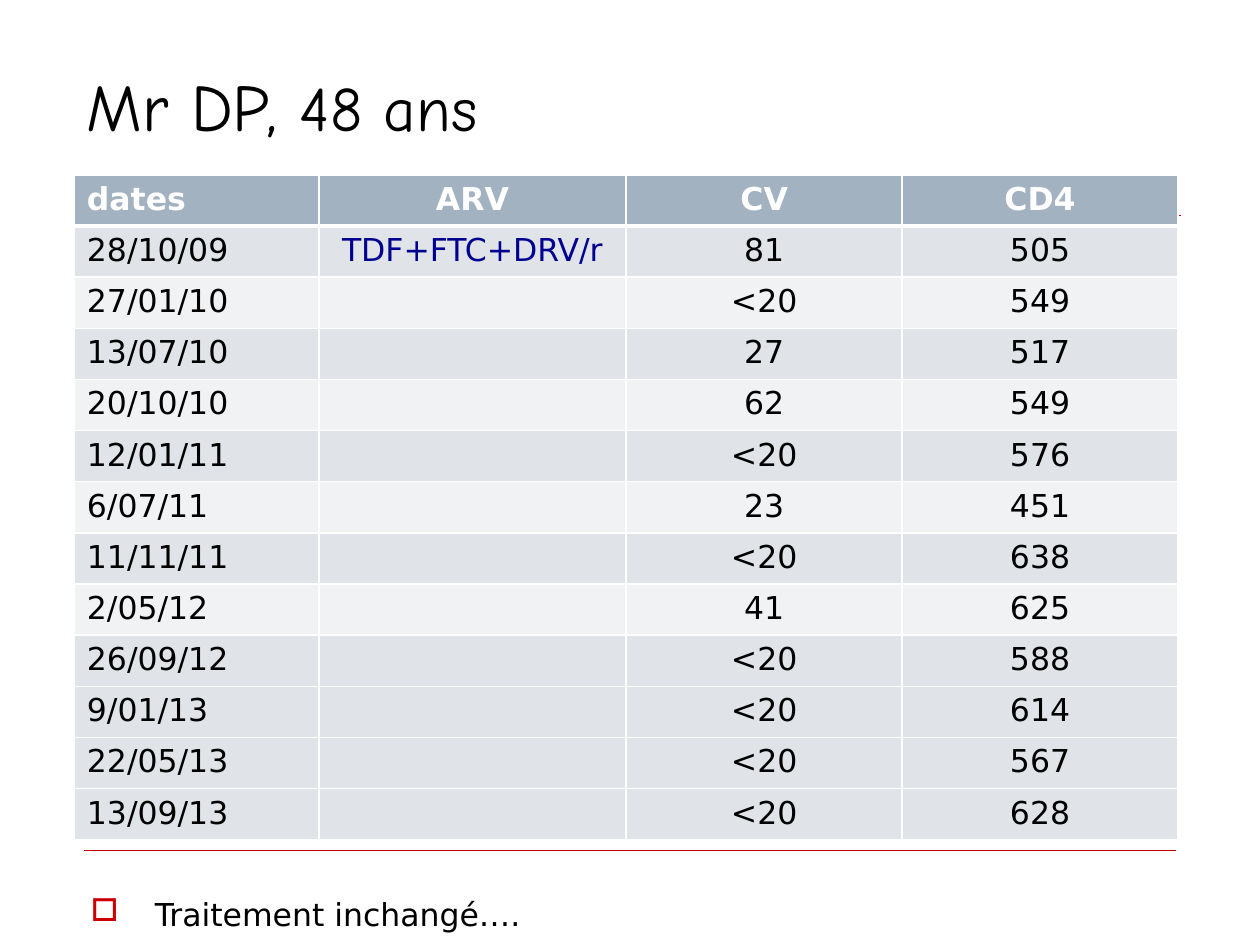
from lxml.etree import SubElement
from pptx import Presentation
from pptx.dml.color import RGBColor
from pptx.enum.shapes import MSO_CONNECTOR
from pptx.enum.text import MSO_ANCHOR as Anchor, PP_ALIGN as Align
from pptx.oxml import parse_xml
from pptx.oxml.ns import nsdecls, qn
from pptx.util import Inches, Pt

WHITE = RGBColor(0xFF, 0xFF, 0xFF)
BLACK = RGBColor(0x00, 0x00, 0x00)
RED = RGBColor(0xCC, 0x00, 0x00)
NAVY = RGBColor(0x00, 0x00, 0x90)
HEADER = RGBColor(0xA3, 0xB2, 0xC1)
DARK_BAND = RGBColor(0xE0, 0xE4, 0xE9)
LIGHT_BAND = RGBColor(0xF0, 0xF2, 0xF4)

TITLE_FONT = "Comic Neue"
BODY_FONT = "DejaVu Sans"

TREATMENT = "TDF+FTC+DRV/r"
COLUMN_SHARES = (0.194, 0.244, 0.219, 0.219)
LIGHT_ROWS = (2, 4, 6, 8)
RESULTS = [
    ("dates", "ARV", "CV", "CD4"),
    ("28/10/09", TREATMENT, "81", "505"),
    ("27/01/10", "", "<20", "549"),
    ("13/07/10", "", "27", "517"),
    ("20/10/10", "", "62", "549"),
    ("12/01/11", "", "<20", "576"),
    ("6/07/11", "", "23", "451"),
    ("11/11/11", "", "<20", "638"),
    ("2/05/12", "", "41", "625"),
    ("26/09/12", "", "<20", "588"),
    ("9/01/13", "", "<20", "614"),
    ("22/05/13", "", "<20", "567"),
    ("13/09/13", "", "<20", "628"),
]


class SlideBuilder:
    """Draws styled elements on one slide, placed by shares of its width and height."""

    def __init__(self, presentation):
        self.width = presentation.slide_width
        self.height = presentation.slide_height
        self.slide = presentation.slides.add_slide(presentation.slide_layouts[6])

    def across(self, share):
        return round(self.width * share)

    def down(self, share):
        return round(self.height * share)

    def place(self, left, top, width, height):
        return self.across(left), self.down(top), self.across(width), self.down(height)

    def style(self, paragraph, name, color, size=None, bold=False):
        font = paragraph.font
        font.name = name
        font.color.rgb = color
        font.bold = bold
        if size:
            font.size = Pt(size)

    def text_box(self, *box):
        frame = self.slide.shapes.add_textbox(*self.place(*box)).text_frame
        frame.word_wrap = True
        return frame

    def title(self, box, pieces, bottom_share):
        frame = self.text_box(*box)
        frame.vertical_anchor = Anchor.BOTTOM
        frame.margin_bottom = self.down(bottom_share)
        paragraph = frame.paragraphs[0]
        self.style(paragraph, TITLE_FONT, BLACK)
        for text, size in pieces:
            run = paragraph.add_run()
            run.text = text
            run.font.size = Pt(size)

    def bullet(self, box, text, indent_share):
        paragraph = self.text_box(*box).paragraphs[0]
        paragraph.text = text
        self.style(paragraph, BODY_FONT, BLACK, 18)
        properties = paragraph._p.get_or_add_pPr()
        indent = self.across(indent_share)
        properties.set("marL", str(indent))
        properties.set("indent", str(-indent))
        color = parse_xml(f'<a:buClr {nsdecls("a")}><a:srgbClr val="{RED}"/></a:buClr>')
        mark = parse_xml(f'<a:buChar {nsdecls("a")} char="□"/>')
        properties.insert(0, color)
        properties.insert(1, mark)

    def rule(self, left, right, top, weight):
        start, end, level = self.across(left), self.across(right), self.down(top)
        line = self.slide.shapes.add_connector(
            MSO_CONNECTOR.STRAIGHT, start, level, end, level
        )
        line.line.color.rgb = RED
        line.line.width = Pt(weight)
        SubElement(line._element.spPr, qn("a:effectLst"))

    def cell(self, cell, text, fill, color, align, bold, top, bottom):
        properties = cell._tc.get_or_add_tcPr()
        for side, weight in (("L", 1), ("R", 1), ("T", top), ("B", bottom)):
            properties.append(parse_xml(
                f'<a:ln{side} {nsdecls("a")} w="{Pt(weight)}"><a:solidFill>'
                f'<a:srgbClr val="{WHITE}"/></a:solidFill></a:ln{side}>'
            ))
        cell.fill.solid()
        cell.fill.fore_color.rgb = fill
        paragraph = cell.text_frame.paragraphs[0]
        paragraph.text = text
        paragraph.alignment = align
        self.style(paragraph, BODY_FONT, color, 18, bold)

    def table(self, box, column_shares, rows):
        table = self.slide.shapes.add_table(
            len(rows), len(column_shares), *self.place(*box)
        ).table
        table.horz_banding = False
        for column, share in zip(table.columns, column_shares):
            column.width = self.across(share)
        for row, values in enumerate(rows):
            is_header = row == 0
            band = LIGHT_BAND if row in LIGHT_ROWS else DARK_BAND
            for column, text in enumerate(values):
                color = NAVY if text == TREATMENT else BLACK
                self.cell(
                    table.cell(row, column),
                    text,
                    fill=HEADER if is_header else band,
                    color=WHITE if is_header else color,
                    align=Align.CENTER if column else Align.LEFT,
                    bold=is_header,
                    top=3 if row == 1 else 1,
                    bottom=3 if is_header else 1,
                )


def main():
    presentation = Presentation()
    presentation.slide_width = Inches(10)
    presentation.slide_height = Inches(7.5)
    builder = SlideBuilder(presentation)
    builder.rule(0.067, 0.937, 0.228, 0.75)
    builder.rule(0.067, 0.933, 0.9, 0.25)
    builder.title(
        (0.059, 0.059, 0.875, 0.177), [("Mr DP, ", 38), ("48 ans", 36)], 0.083
    )
    builder.bullet((0.062, 0.941, 0.875, 0.073), "Traitement inchangé….", 0.051)
    builder.table((0.059, 0.185, 0.875, 0.704), COLUMN_SHARES, RESULTS)
    presentation.save("out.pptx")


if __name__ == "__main__":
    main()
